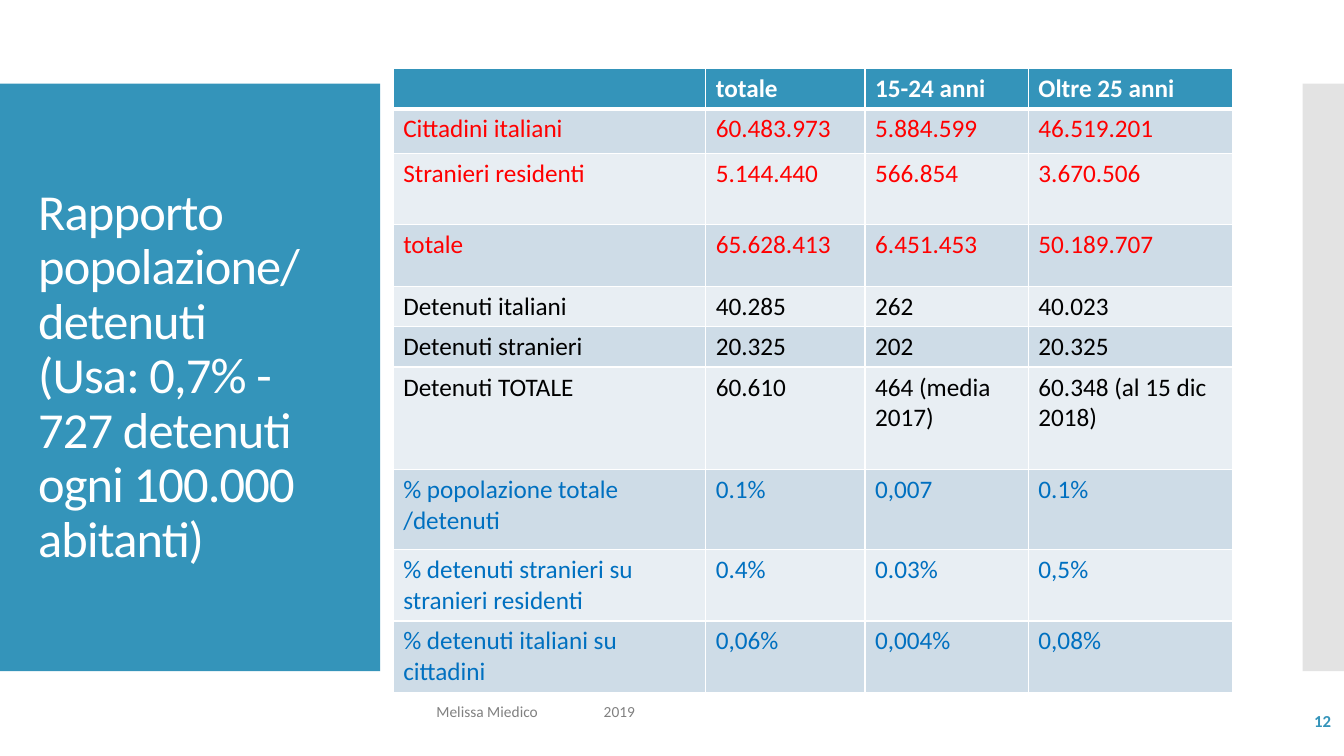
from lxml import etree
from pptx import Presentation
from pptx import util as u
from pptx.dml.color import RGBColor
from pptx.enum import shapes, text
from pptx.oxml import ns

BLUE = RGBColor(0x34, 0x94, 0xBA)
GREY = RGBColor(0xC8, 0xC8, 0xC8)
FOOTER_GREY = RGBColor(0x80, 0x80, 0x80)
WHITE = RGBColor(0xFF, 0xFF, 0xFF)
BLACK = RGBColor(0, 0, 0)
RED = RGBColor(0xFF, 0, 0)
RATE_BLUE = RGBColor(0x00, 0x70, 0xC0)
BAND_DARK = RGBColor(0xCE, 0xDC, 0xE7)
BAND_LIGHT = RGBColor(0xE8, 0xEE, 0xF3)

TITLE = "Rapporto popolazione/ detenuti\v(Usa: 0,7% - 727 detenuti ogni 100.000 abitanti)"
COLUMNS = [3.1, 1.58, 1.62, 2.03]
ROWS = [
    (0.4, WHITE, ["", "totale", "15-24 anni", "Oltre 25 anni"]),
    (0.44, RED, ["Cittadini italiani", "60.483.973", "5.884.599", "46.519.201"]),
    (0.71, RED, ["Stranieri residenti", "5.144.440", "566.854", "3.670.506"]),
    (0.61, RED, ["totale", "65.628.413", "6.451.453", "50.189.707"]),
    (0.4, BLACK, ["Detenuti italiani", "40.285", "262", "40.023"]),
    (0.4, BLACK, ["Detenuti stranieri", "20.325", "202", "20.325"]),
    (1.02, BLACK, ["Detenuti TOTALE", "60.610", "464 (media 2017)", "60.348 (al 15 dic 2018)"]),
    (0.79, RATE_BLUE, ["% popolazione totale /detenuti", "0.1%", "0,007", "0.1%"]),
    (0.71, RATE_BLUE, ["% detenuti stranieri su stranieri residenti", "0.4%", "0.03%", "0,5%"]),
    (0.71, RATE_BLUE, ["% detenuti italiani su cittadini", "0,06%", "0,004%", "0,08%"]),
]


class SlideBuilder:
    font = "Calibri"

    def __init__(self, s):
        self.s = s

    def place(self, *box):
        return [u.Inches(value) for value in box]

    def fill_text(self, p, words, size, color, bold=False, spacing=None):
        p.text = words
        style = {"name": self.font, "size": u.Pt(size), "bold": bold}
        for r in p.runs:
            for name, value in style.items():
                setattr(r.font, name, value)
            r.font.color.rgb = color
            if spacing is not None:
                r._r.get_or_add_rPr().set("spc", str(spacing))

    def panel(self, box, color, opacity=None):
        sp = self.s.shapes.add_shape(shapes.MSO_SHAPE.RECTANGLE, *self.place(*box))
        sp.shadow.inherit = False
        sp.fill.solid()
        sp.fill.fore_color.rgb = color
        sp.line.fill.background()
        if opacity is not None:
            rgb = sp._element.spPr.find(".//" + ns.qn("a:srgbClr"))
            etree.SubElement(rgb, ns.qn("a:alpha")).set("val", str(opacity * 1000))

    def label(self, box, words, size, color, anchor=text.MSO_ANCHOR.MIDDLE,
              align=text.PP_ALIGN.LEFT, line_spacing=None, tab=None, **style):
        tf = self.s.shapes.add_textbox(*self.place(*box)).text_frame
        for name, value in {"word_wrap": True, "vertical_anchor": anchor}.items():
            setattr(tf, name, value)
        p = tf.paragraphs[0]
        if tab is not None:
            tabs = etree.SubElement(p._p.get_or_add_pPr(), ns.qn("a:tabLst"))
            stop = etree.SubElement(tabs, ns.qn("a:tab"))
            stop.set("pos", str(u.Inches(tab)))
            stop.set("algn", "l")
        for name, value in {"alignment": align, "line_spacing": line_spacing}.items():
            setattr(p, name, value)
        self.fill_text(p, words, size, color, **style)

    def borders(self, cell, top, bottom):
        tcPr = cell._tc.get_or_add_tcPr()
        for side, width in {"L": 1, "R": 1, "T": top, "B": bottom}.items():
            ln = etree.SubElement(tcPr, ns.qn("a:ln" + side))
            ln.set("w", str(u.Pt(width)))
            fill = etree.SubElement(ln, ns.qn("a:solidFill"))
            etree.SubElement(fill, ns.qn("a:srgbClr")).set("val", str(WHITE))

    def table(self, left, top, columns, rows):
        box = (left, top, sum(columns), sum(row[0] for row in rows))
        frame = self.s.shapes.add_table(len(rows), len(columns), *self.place(*box))
        table = frame.table
        for column, width in zip(table.columns, columns):
            column.width = u.Inches(width)
        for i, (height, color, values) in enumerate(rows):
            table.rows[i].height = u.Inches(height)
            band = BLUE if i == 0 else BAND_DARK if i % 2 else BAND_LIGHT
            for j, value in enumerate(values):
                cell = table.cell(i, j)
                self.borders(cell, 3 if i == 1 else 1, 3 if i == 0 else 1)
                cell.fill.solid()
                cell.fill.fore_color.rgb = band
                self.fill_text(cell.text_frame.paragraphs[0], value, 18, color, bold=i == 0)


def main():
    prs = Presentation()
    prs.slide_width = u.Inches(13.33)
    prs.slide_height = u.Inches(7.5)
    slide = SlideBuilder(prs.slides.add_slide(prs.slide_layouts[6]))
    slide.panel((0, 0.83, 3.77, 5.83), BLUE)
    slide.panel((12.92, 0.83, 0.41, 5.83), GREY, opacity=50)
    slide.label((0.28, 1.23, 3.22, 5.03), TITLE, 36, WHITE, line_spacing=0.9, spacing=-60)
    slide.table(3.9, 0.68, COLUMNS, ROWS)
    slide.label((4.23, 6.92, 6.46, 0.4), "Melissa Miedico\t2019", 11, FOOTER_GREY,
                anchor=text.MSO_ANCHOR.TOP, tab=1.66)
    slide.label((11.63, 6.95, 1.67, 0.4), "12", 12, BLUE,
                align=text.PP_ALIGN.RIGHT, bold=True)
    prs.save("out.pptx")


if __name__ == "__main__":
    main()
